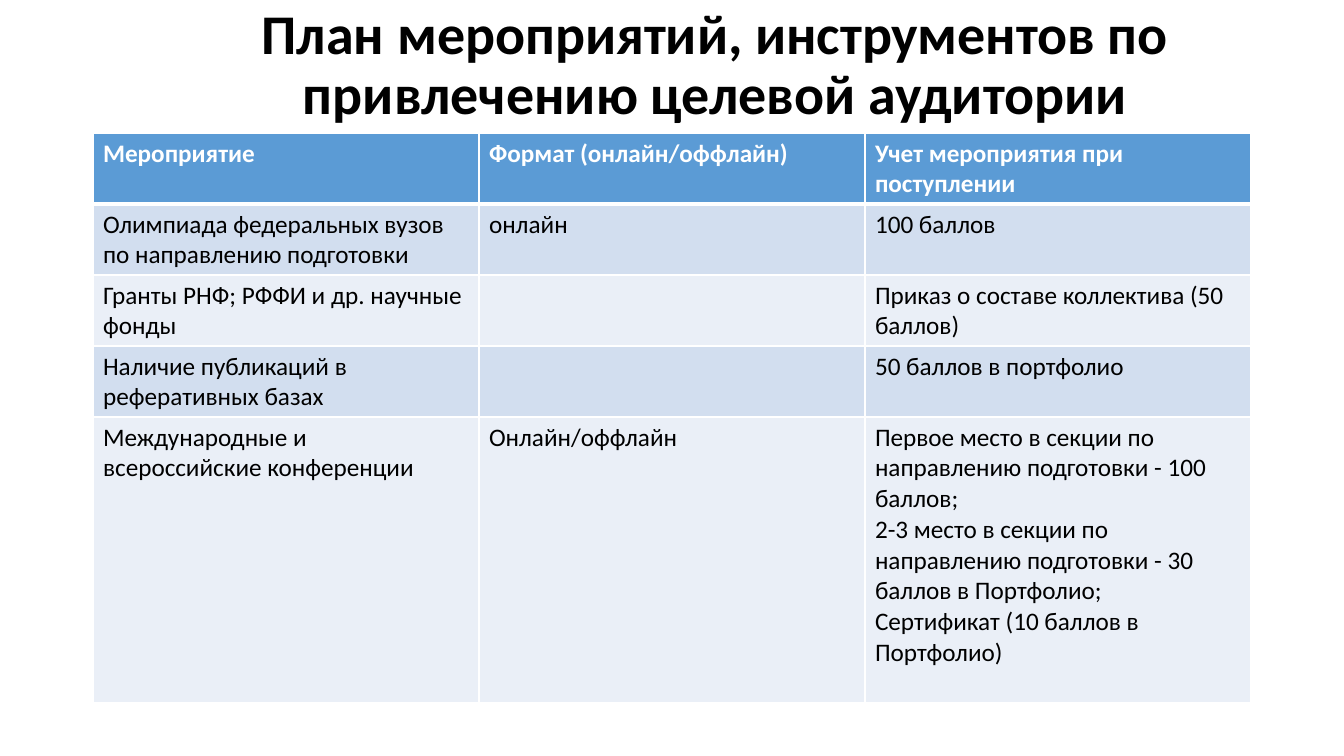
import pptx
import pptx.dml.color
import pptx.enum.text
import pptx.oxml
import pptx.oxml.ns
import pptx.util
from dataclasses import dataclass

PX = 914400 / 100.8


@dataclass(frozen=True)
class Theme:
    font: str = "Calibri"
    title_size: int = 40
    table_size: int = 18
    text: str = "000000"
    header_text: str = "FFFFFF"
    header_fill: str = "5B9BD5"
    odd_fill: str = "D2DEEF"
    even_fill: str = "EAEFF7"
    border: str = "FFFFFF"
    thin_line: int = 1
    thick_line: int = 3


THEME = Theme()

TITLE = "План мероприятий, инструментов по привлечению целевой аудитории"

ROWS = [
    ["Мероприятие", "Формат (онлайн/оффлайн)", "Учет мероприятия при поступлении"],
    ["Олимпиада федеральных вузов по направлению подготовки", "онлайн", "100 баллов"],
    ["Гранты РНФ; РФФИ и др. научные фонды", "", "Приказ о составе коллектива (50 баллов)"],
    ["Наличие публикаций в реферативных базах", "", "50 баллов в портфолио"],
    [
        "Международные и всероссийские конференции",
        "Онлайн/оффлайн",
        "Первое место в секции по направлению подготовки - 100 баллов;\n"
        "2-3 место в секции по направлению подготовки - 30 баллов в Портфолио;\n"
        "Сертификат (10 баллов в Портфолио)",
    ],
]
ROW_HEIGHTS = [71, 71, 71, 71, 286]
COLUMN_WIDTH = 386


def px(value):
    return pptx.util.Emu(round(value * PX))


def rgb(value):
    return pptx.dml.color.RGBColor.from_string(value)


def write_text(frame, text, size, color, bold=False, alignment=None, line_spacing=None):
    frame.word_wrap = True
    for index, line in enumerate(text.split("\n")):
        paragraph = frame.add_paragraph() if index else frame.paragraphs[0]
        paragraph.alignment = alignment
        paragraph.line_spacing = line_spacing
        paragraph.font.size = pptx.util.Pt(size)
        if line:
            run = paragraph.add_run()
            run.text = line
            run.font.name = THEME.font
            run.font.size = pptx.util.Pt(size)
            run.font.bold = bold
            run.font.color.rgb = rgb(color)


def add_title(slide, text, left, top, width, height):
    shape = slide.shapes.add_textbox(px(left), px(top), px(width), px(height))
    shape.text_frame.vertical_anchor = pptx.enum.text.MSO_ANCHOR.MIDDLE
    write_text(
        shape.text_frame, text, THEME.title_size, THEME.text, bold=True,
        alignment=pptx.enum.text.PP_ALIGN.CENTER, line_spacing=0.9,
    )


def set_borders(cell, **widths):
    properties = cell._tc.get_or_add_tcPr()
    for index, side in enumerate("LRTB"):
        width = pptx.util.Pt(widths.get(side, THEME.thin_line))
        line = pptx.oxml.parse_xml(
            f'<a:ln{side} {pptx.oxml.ns.nsdecls("a")} w="{width}"><a:solidFill>'
            f'<a:srgbClr val="{THEME.border}"/></a:solidFill></a:ln{side}>'
        )
        properties.insert(index, line)


def fill_cell(cell, text, row_index):
    header = row_index == 0
    band = THEME.odd_fill if row_index % 2 else THEME.even_fill
    cell.fill.solid()
    cell.fill.fore_color.rgb = rgb(THEME.header_fill if header else band)
    set_borders(
        cell,
        T=THEME.thick_line if row_index == 1 else THEME.thin_line,
        B=THEME.thick_line if header else THEME.thin_line,
    )
    color = THEME.header_text if header else THEME.text
    write_text(cell.text_frame, text, THEME.table_size, color, bold=header)


def add_events_table(slide, rows, left, top):
    column_count = len(rows[0])
    table = slide.shapes.add_table(
        len(rows), column_count, px(left), px(top),
        px(COLUMN_WIDTH * column_count), px(sum(ROW_HEIGHTS)),
    ).table
    for column in table.columns:
        column.width = px(COLUMN_WIDTH)
    for row_index, (texts, height) in enumerate(zip(rows, ROW_HEIGHTS)):
        table.rows[row_index].height = px(height)
        for column_index, text in enumerate(texts):
            fill_cell(table.cell(row_index, column_index), text, row_index)


def main():
    presentation = pptx.Presentation()
    presentation.slide_width = px(1344)
    presentation.slide_height = px(756)
    slide = presentation.slides.add_slide(presentation.slide_layouts[6])
    add_title(slide, TITLE, 110, 0, 1210, 133)
    add_events_table(slide, ROWS, 93, 133)
    presentation.save("out.pptx")


if __name__ == "__main__":
    main()
